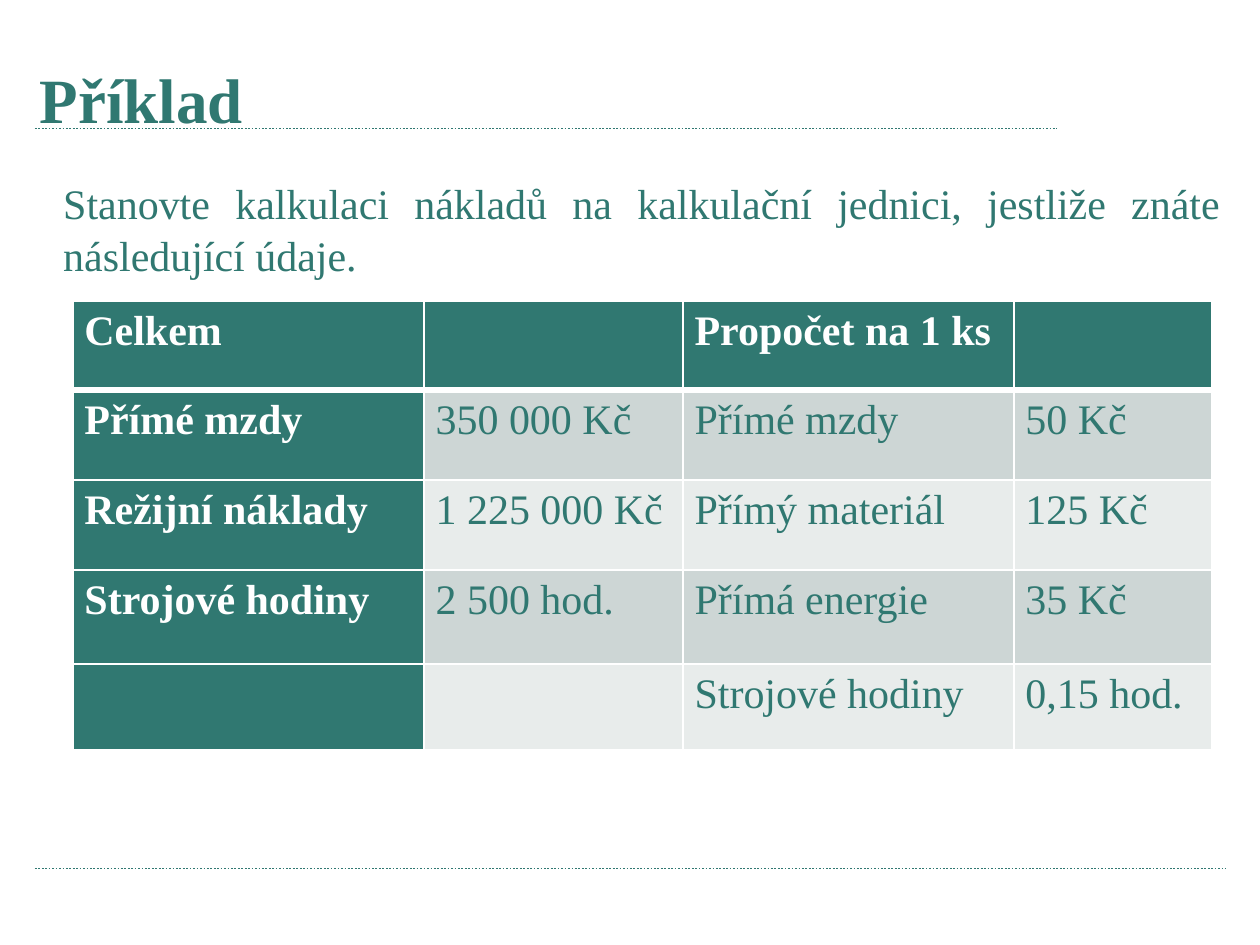
"""Build the cost calculation example slide."""
from dataclasses import dataclass
from typing import Any

from lxml.etree import SubElement
from pptx import Presentation
from pptx.dml.color import RGBColor as Rgb
from pptx.enum.dml import MSO_LINE as Dash
from pptx.enum.shapes import MSO_CONNECTOR as Connector
from pptx.enum.text import MSO_ANCHOR as Anchor, PP_ALIGN as Align
from pptx.oxml.ns import qn
from pptx.util import Pt

COLORS = {"teal": "307871", "white": "FFFFFF", "dark_band": "CDD6D5", "light_band": "E8ECEB"}
FONT = "Times New Roman"
BODY_SIZE = 18

COLUMN_WIDTHS = (150.5, 111, 141.8, 84.9)
ROW_HEIGHTS = (38.3, 38.6, 38.6, 40.2, 36.9)
COST_ROWS = (
    ("Celkem", "", "Propočet na 1 ks", ""),
    ("Přímé mzdy", "350 000 Kč", "Přímé mzdy", "50 Kč"),
    ("Režijní náklady", "1 225 000 Kč", "Přímý materiál", "125 Kč"),
    ("Strojové hodiny", "2 500 hod.", "Přímá energie", "35 Kč"),
    ("", "", "Strojové hodiny", "0,15 hod."),
)


@dataclass(frozen=True)
class Rule:
    left: float
    right: float
    y: float


@dataclass(frozen=True)
class TextBlock:
    text: str
    left: float
    top: float
    width: float
    height: float
    size: float
    bold: bool
    anchor: Any
    align: Any
    spacing: float


RULES = (Rule(15, 453, 55.1), Rule(15, 525.5, 372.3))
TEXT_BLOCKS = (
    TextBlock("Příklad", 10, 21, 476, 42.5, 27, True, Anchor.MIDDLE, Align.LEFT, 1),
    TextBlock(
        "Stanovte kalkulaci nákladů na kalkulační jednici, jestliže znáte následující údaje.",
        20, 71.5, 510.5, 283.5, BODY_SIZE, False, Anchor.TOP, Align.JUSTIFY, 1.04,
    ),
)


def rgb(name: str) -> Rgb:
    return Rgb.from_string(COLORS[name])


def add_run(paragraph: Any, text: str, size: float, color: str, bold: bool) -> None:
    run = paragraph.add_run()
    run.text = text
    run.font.name = FONT
    run.font.size = Pt(size)
    run.font.bold = bold
    run.font.color.rgb = rgb(color)


def draw_rule(slide: Any, rule: Rule) -> None:
    line = slide.shapes.add_connector(
        Connector.STRAIGHT, Pt(rule.left), Pt(rule.y), Pt(rule.right), Pt(rule.y)
    )
    line.line.color.rgb = rgb("teal")
    line.line.width = Pt(0.75)
    line.line.dash_style = Dash.ROUND_DOT
    SubElement(line._element.spPr, qn("a:effectLst"))


def draw_text(slide: Any, block: TextBlock) -> None:
    box = slide.shapes.add_textbox(
        Pt(block.left), Pt(block.top), Pt(block.width), Pt(block.height)
    )
    frame = box.text_frame
    frame.word_wrap = True
    frame.vertical_anchor = block.anchor
    paragraph = frame.paragraphs[0]
    paragraph.alignment = block.align
    paragraph.line_spacing = block.spacing
    add_run(paragraph, block.text, block.size, "teal", block.bold)


def add_border(cell: Any, side: str, width: float) -> None:
    border = SubElement(cell._tc.get_or_add_tcPr(), qn(f"a:ln{side}"), w=str(Pt(width)))
    fill = SubElement(border, qn("a:solidFill"))
    SubElement(fill, qn("a:srgbClr"), val=COLORS["white"])


def style_cell(cell: Any, text: str, row: int, column: int) -> None:
    heading = row == 0 or column == 0
    cell.margin_left = cell.margin_right = Pt(5)
    cell.margin_top = cell.margin_bottom = Pt(0)
    for side in "LRTB":
        under_header = (row, side) in ((0, "B"), (1, "T"))
        add_border(cell, side, 3 if under_header else 1)
    band = "dark_band" if row % 2 else "light_band"
    cell.fill.solid()
    cell.fill.fore_color.rgb = rgb("teal" if heading else band)
    paragraph = cell.text_frame.paragraphs[0]
    paragraph.line_spacing = 1.15
    if text:
        add_run(paragraph, text, BODY_SIZE, "white" if heading else "teal", heading)


def draw_cost_table(slide: Any) -> None:
    costs = slide.shapes.add_table(
        len(ROW_HEIGHTS), len(COLUMN_WIDTHS), Pt(31.2), Pt(129),
        Pt(sum(COLUMN_WIDTHS)), Pt(sum(ROW_HEIGHTS)),
    ).table
    for column, width in zip(costs.columns, COLUMN_WIDTHS):
        column.width = Pt(width)
    for row, height in zip(costs.rows, ROW_HEIGHTS):
        row.height = Pt(height)
    for r, texts in enumerate(COST_ROWS):
        for c, text in enumerate(texts):
            style_cell(costs.cell(r, c), text, r, c)


def main() -> None:
    deck = Presentation()
    deck.slide_width, deck.slide_height = Pt(540), Pt(405)
    slide = deck.slides.add_slide(deck.slide_layouts[6])
    for rule in RULES:
        draw_rule(slide, rule)
    for block in TEXT_BLOCKS:
        draw_text(slide, block)
    draw_cost_table(slide)
    deck.save("out.pptx")


if __name__ == "__main__":
    main()
